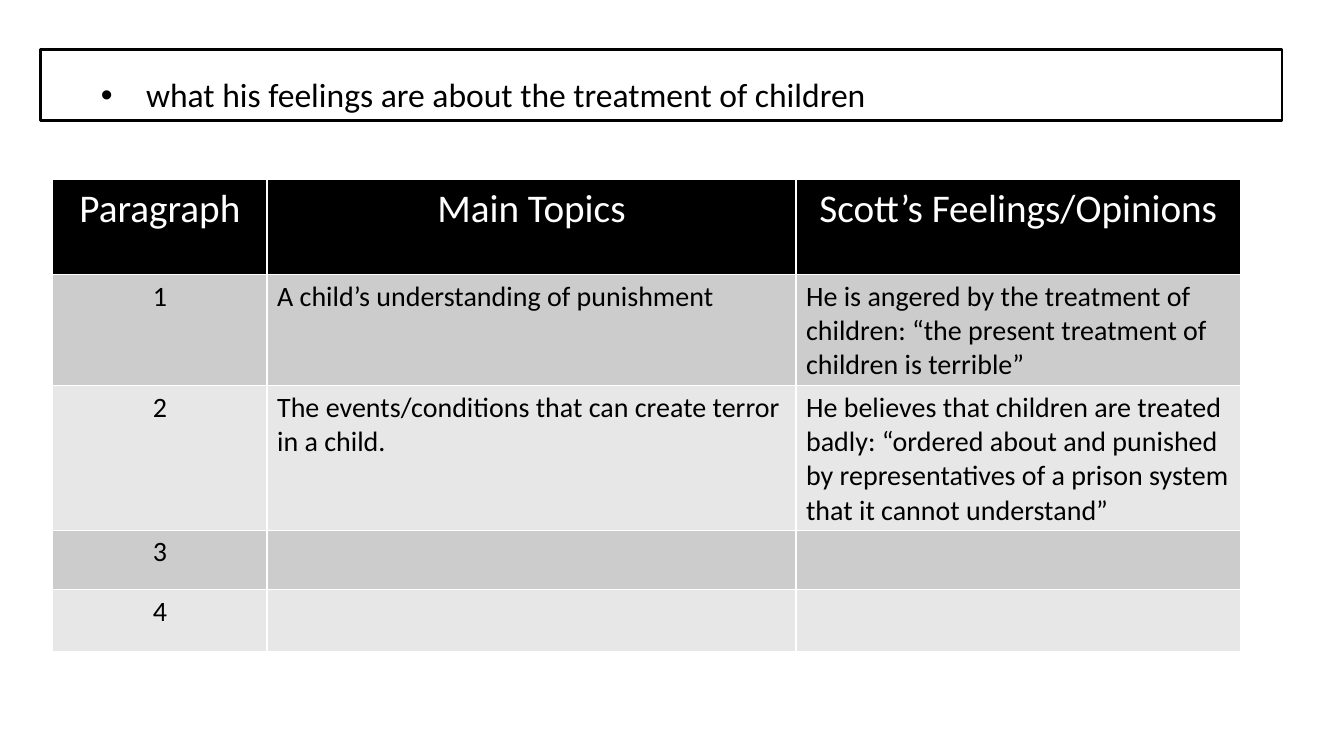
from lxml.etree import SubElement
from pptx import Presentation
from pptx.dml.color import RGBColor
from pptx.enum.shapes import MSO_SHAPE
from pptx.enum.text import MSO_ANCHOR, MSO_AUTO_SIZE, PP_ALIGN
from pptx.oxml.ns import qn
from pptx.util import Cm, Pt

COLORS = {"ink": "000000", "paper": "FFFFFF", "dark_band": "CCCCCC", "light_band": "E7E7E7"}
FONT = "Calibri"
COLUMN_WIDTHS = [5.4, 13.33, 11.2]
ROW_HEIGHTS = [2.39, 2.79, 3.63, 1.5, 1.55]
ROWS = [
    ["Paragraph", "Main Topics", "Scott’s Feelings/Opinions"],
    ["1", "A child’s understanding of punishment",
     "He is angered by the treatment of children: “the present treatment of children is terrible”"],
    ["2", "The events/conditions that can create terror in a child.",
     "He believes that children are treated badly: “ordered about and punished "
     "by representatives of a prison system that it cannot understand”"],
    ["3", "", ""],
    ["4", "", ""],
]


def color(name):
    return RGBColor.from_string(COLORS[name])


def add_run(p, text, size, ink):
    r = p.add_run()
    r.text = text
    r.font.name = FONT
    r.font.size = Pt(size)
    r.font.bold = False
    r.font.color.rgb = color(ink)


def add_bullet(p, margin, hanging):
    pPr = p._p.get_or_add_pPr()
    pPr.set("marL", str(Cm(margin)))
    pPr.set("indent", str(-Cm(hanging)))
    SubElement(pPr, qn("a:buFont"), typeface="Arial")
    SubElement(pPr, qn("a:buChar"), char="•")


def add_question(s, left, top, width, height):
    sp = s.shapes.add_shape(MSO_SHAPE.RECTANGLE, Cm(left), Cm(top), Cm(width), Cm(height))
    sp.shadow.inherit = False
    sp.fill.solid()
    sp.fill.fore_color.rgb = color("paper")
    sp.line.color.rgb = color("ink")
    sp.line.width = Pt(2)
    tf = sp.text_frame
    tf.word_wrap = True
    tf.auto_size = MSO_AUTO_SIZE.SHAPE_TO_FIT_TEXT
    tf.vertical_anchor = MSO_ANCHOR.TOP
    p = tf.paragraphs[0]
    p.level = 1
    p.alignment = PP_ALIGN.LEFT
    p.line_spacing = 1.5
    add_bullet(p, 2.22, 0.95)
    add_run(p, " what his feelings are about the treatment of children", 24, "ink")


def add_topics_table(s, left, top):
    table = s.shapes.add_table(len(ROWS), len(COLUMN_WIDTHS), Cm(left), Cm(top),
                               Cm(sum(COLUMN_WIDTHS)), Cm(sum(ROW_HEIGHTS))).table
    for column, width in zip(table.columns, COLUMN_WIDTHS):
        column.width = Cm(width)
    for i, (row, height) in enumerate(zip(table.rows, ROW_HEIGHTS)):
        row.height = Cm(height)
        header = i == 0
        band = "ink" if header else "dark_band" if i % 2 else "light_band"
        for j, text in enumerate(ROWS[i]):
            cell = table.cell(i, j)
            cell.fill.solid()
            cell.fill.fore_color.rgb = color(band)
            if text:
                p = cell.text_frame.paragraphs[0]
                p.alignment = PP_ALIGN.CENTER if header or j == 0 else PP_ALIGN.LEFT
                add_run(p, text, 28 if header else 20, "paper" if header else "ink")


def main():
    prs = Presentation()
    prs.slide_width = Cm(33.87)
    prs.slide_height = Cm(19.05)
    s = prs.slides.add_slide(prs.slide_layouts[6])
    add_question(s, 1.02, 1.24, 31.29, 1.8)
    add_topics_table(s, 1.33, 4.53)
    prs.save("out.pptx")


if __name__ == "__main__":
    main()
